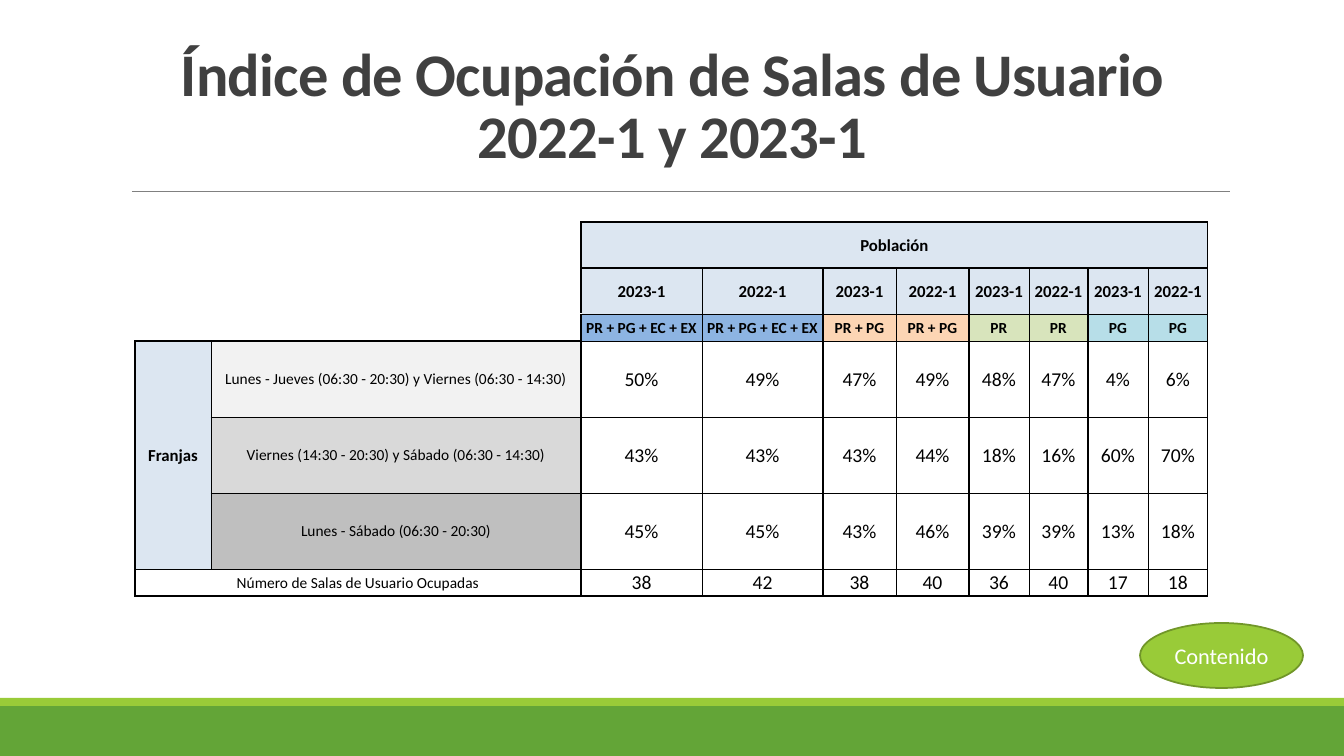
from lxml import etree
from pptx import Presentation, util as u
from pptx.dml.color import RGBColor
from pptx.enum import shapes, text
from pptx.oxml.ns import qn

HEAD = "Índice de Ocupación de Salas de Usuario\v2022-1 y 2023-1"
POP, SLOT = "Población", "Franjas"
YEARS = ["2023-1", "2022-1"]
GROUPS = [("PR + PG + EC + EX", "blue"), ("PR + PG", "peach"),
          ("PR", "lime"), ("PG", "aqua")]
SLOTS = [
    ("Lunes - Jueves (06:30 - 20:30) y Viernes (06:30 - 14:30)", "pale",
     [50, 49, 47, 49, 48, 47, 4, 6]),
    ("Viernes (14:30 - 20:30) y Sábado (06:30 - 14:30)", "mid",
     [43, 43, 43, 44, 18, 16, 60, 70]),
    ("Lunes - Sábado (06:30 - 20:30)", "gray",
     [45, 45, 43, 46, 39, 39, 13, 18]),
]
TOTAL = "Número de Salas de Usuario Ocupadas"
ROOMS = [38, 42, 38, 40, 36, 40, 17, 18]
COLS = [76, 370, 121, 121, 73, 73, 60, 59, 60, 60]
ROWS = [46, 46, 27, 76, 76, 76, 27]
HEX = {"green": "63A537", "leaf": "99CB38", "moss": "719629", "rule": "808080",
       "ink": "404040", "black": "000000", "white": "FFFFFF", "ice": "DCE6F1",
       "blue": "8DB4E2", "peach": "FCD5B4", "lime": "D8E4BC", "aqua": "B7DEE8",
       "pale": "F2F2F2", "mid": "D9D9D9", "gray": "BFBFBF"}
BOLD = {"size": 12, "bold": True}
TAG = {"size": 11, "bold": True}
NOTE = {"size": 11, "bold": False}
DATA = {"size": 14, "bold": False}

deck = Presentation()
deck.slide_width, deck.slide_height = u.Inches(13.333), u.Inches(7.5)
SCALE = deck.slide_height / 756
slide = deck.slides.add_slide(deck.slide_layouts[5])


def px(*nums):
    return [u.Emu(round(n * SCALE)) for n in nums]


def tint(hue):
    return RGBColor.from_string(HEX[hue])


def write(frame, words, hue, form):
    para = frame.paragraphs[0]
    para.text = words
    para.alignment = text.PP_ALIGN.CENTER
    for run in para.runs:
        run.font.name = "Calibri"
        run.font.color.rgb = tint(hue)
        for key, val in form.items():
            setattr(run.font, key, u.Pt(val) if key == "size" else val)
    return para


def draw(kind, box, hue, edge=None):
    shape = slide.shapes.add_shape(kind, *px(*box))
    shape.shadow.inherit = False
    shape.fill.solid()
    shape.fill.fore_color.rgb = tint(hue)
    if edge:
        shape.line.color.rgb = tint(edge)
        shape.line.width = u.Pt(1.25)
    else:
        shape.line.fill.background()
    return shape


def border(cell, side, width):
    line = etree.SubElement(cell._tc.get_or_add_tcPr(), qn("a:" + side),
                            w=str(u.Pt(width)))
    fill = etree.SubElement(line, qn("a:solidFill"))
    etree.SubElement(fill, qn("a:srgbClr"), val=HEX["black"])


def upright(col):
    return 1 if col % 2 == 0 else 0.5


def level(row, col):
    return 1 if row in (0, 1, 7) or (row == 3 and col < 2) else 0.5


KIND = shapes.MSO_SHAPE
draw(KIND.RECTANGLE, (0, 706, 1344, 50), "green")
draw(KIND.RECTANGLE, (0, 698, 1344, 8), "leaf")
rule = slide.shapes.add_connector(shapes.MSO_CONNECTOR.STRAIGHT,
                                  *px(132, 191, 1230, 191))
rule.line.color.rgb = tint("rule")
rule.line.width = u.Pt(0.5)
etree.SubElement(rule._element.spPr, qn("a:effectLst"))

button = draw(KIND.OVAL, (1140, 623, 163, 65), "leaf", "moss")
button.text_frame.vertical_anchor = text.MSO_ANCHOR.MIDDLE
write(button.text_frame, "Contenido", "white", {"size": 16})

title = slide.shapes.title
title.left, title.top, title.width, title.height = px(93, 56, 1159, 106)
title.text_frame.auto_size = text.MSO_AUTO_SIZE.NONE
title.text_frame.vertical_anchor = text.MSO_ANCHOR.MIDDLE
para = write(title.text_frame, HEAD, "ink", {"size": 43.2, "bold": True})
para.line_spacing = 0.85
for run in para.runs:
    run.font._element.set("spc", "-50")

cells = {(0, 2): (POP, "ice", BOLD), (3, 0): (SLOT, "ice", BOLD),
         (6, 0): (TOTAL, None, NOTE)}
for i, rooms in enumerate(ROOMS):
    name, hue = GROUPS[i // 2]
    cells[1, i + 2] = YEARS[i % 2], "ice", BOLD
    cells[2, i + 2] = name, hue, TAG
    cells[6, i + 2] = str(rooms), None, DATA
for r, (name, hue, rates) in enumerate(SLOTS, 3):
    cells[r, 1] = name, hue, NOTE
    for c, rate in enumerate(rates, 2):
        cells[r, c] = f"{rate}%", None, DATA

table = slide.shapes.add_table(len(ROWS), len(COLS),
                               *px(135, 222, sum(COLS), sum(ROWS))).table
table.first_row = table.horz_banding = False
for col, width in zip(table.columns, px(*COLS)):
    col.width = width
for row, height in zip(table.rows, px(*ROWS)):
    row.height = height
for start, end in [((0, 2), (0, 9)), ((3, 0), (5, 0)), ((6, 0), (6, 1))]:
    table.cell(*start).merge(table.cell(*end))

for r in range(len(ROWS)):
    for c in range(len(COLS)):
        cell = table.cell(r, c)
        cell.margin_left = cell.margin_right = cell.margin_top = u.Inches(0.01)
        cell.margin_bottom = 0
        cell.vertical_anchor = text.MSO_ANCHOR.MIDDLE
        words, hue, form = cells.get((r, c), ("", None, NOTE))
        para = write(cell.text_frame, words, "black", form)
        if not words:
            etree.SubElement(para._p, qn("a:endParaRPr"), sz="1100")
        blank = r < 3 and c < 2
        if not cell.is_spanned:
            right = c + (cell.span_width if cell.is_merge_origin else 1)
            below = r + (cell.span_height if cell.is_merge_origin else 1)
            sides = [("lnL", upright(c), not blank),
                     ("lnR", upright(right), not blank or c == 1),
                     ("lnT", level(r, c), not blank),
                     ("lnB", level(below, c), not blank or r == 2)]
            for side, width, shown in sides:
                if shown:
                    border(cell, side, width)
        if hue or blank:
            cell.fill.solid()
            cell.fill.fore_color.rgb = tint(hue or "white")
        else:
            cell.fill.background()

deck.save("out.pptx")
